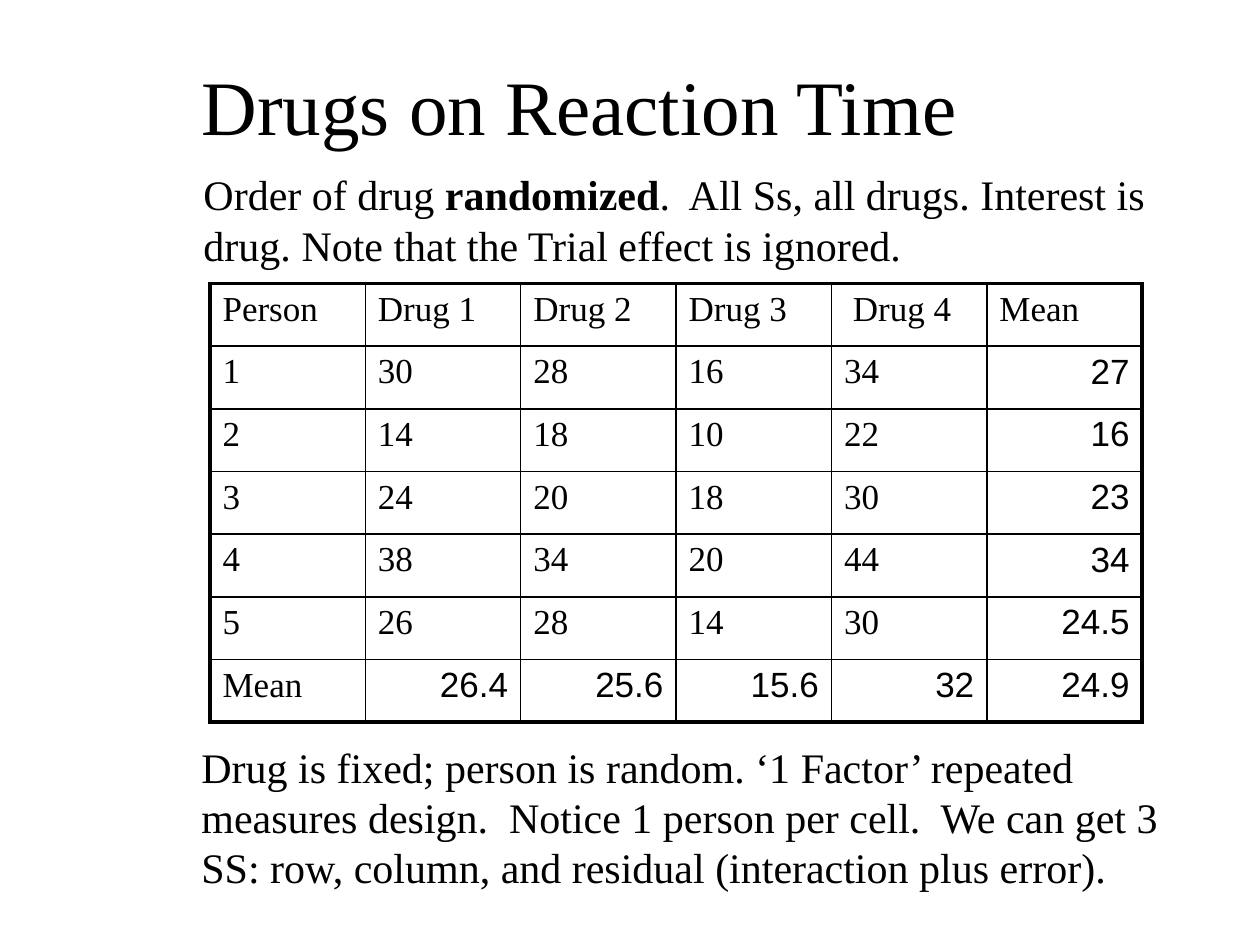
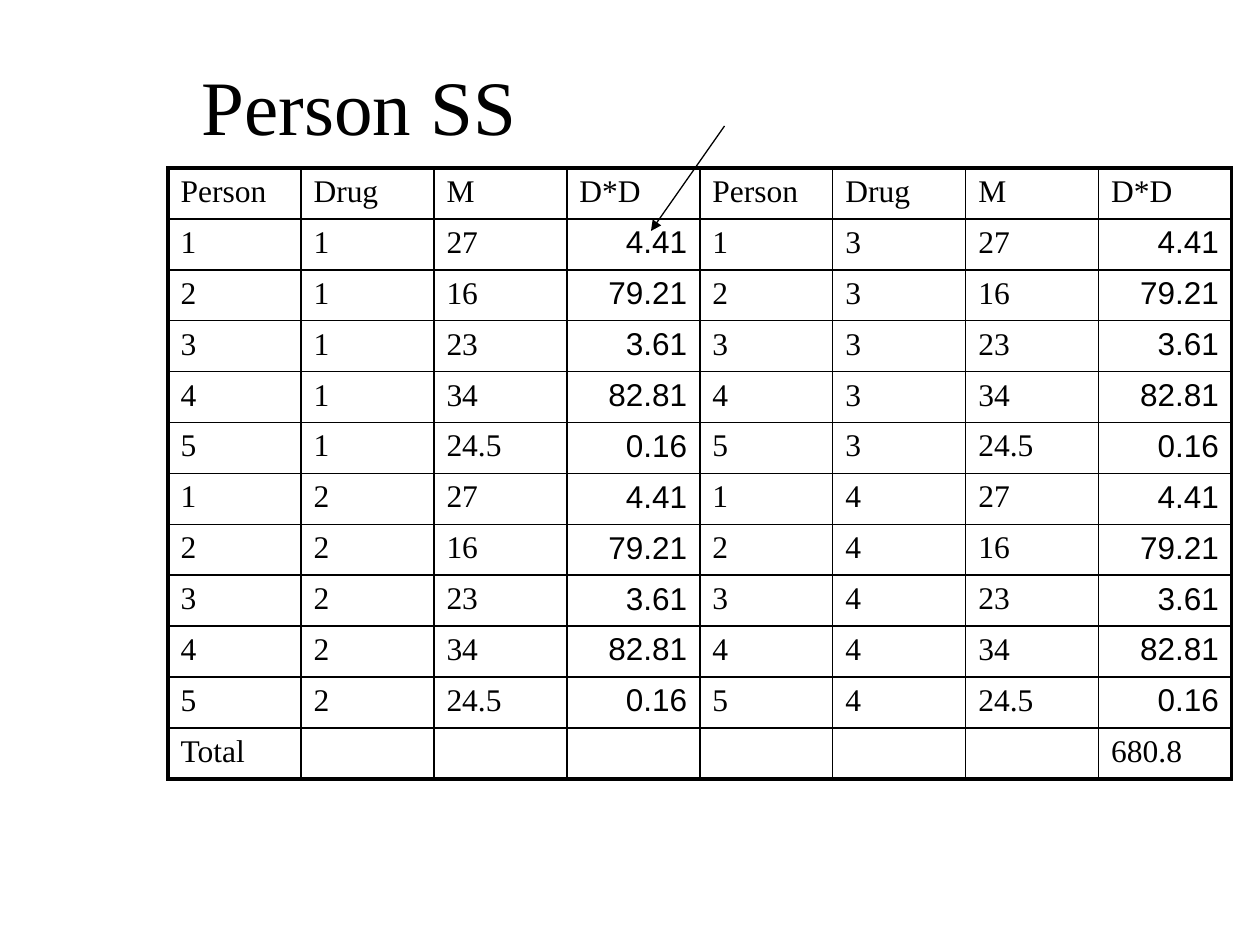
from lxml import etree
from pptx import Presentation
from pptx.dml.color import RGBColor
from pptx.enum.shapes import MSO_CONNECTOR
from pptx.enum.text import MSO_ANCHOR, MSO_AUTO_SIZE, PP_ALIGN
from pptx.oxml.ns import qn
from pptx.util import Inches, Pt

STRAIGHT = MSO_CONNECTOR.STRAIGHT
MIDDLE = MSO_ANCHOR.MIDDLE
FIXED_SIZE = MSO_AUTO_SIZE.NONE
LEFT, RIGHT = PP_ALIGN.LEFT, PP_ALIGN.RIGHT

COLOURS = {"ink": "000000"}
INK = RGBColor.from_string(COLOURS["ink"])
SERIF, SANS = "Times New Roman", "Arial"
THIN, THICK = Pt(1), Pt(2.25)

# The slide is a grid of 120 columns and 90 rows
COLUMNS, ROWS = 120, 90
deck = Presentation()
deck.slide_width, deck.slide_height = Inches(10), Inches(7.5)
CELL = deck.slide_width / COLUMNS
TITLE_AREA = (18, 4, 93, 12)


def write(paragraph, pieces, size, name=SERIF, alignment=LEFT):
    """Write (text, bold) pieces as one formatted paragraph."""
    paragraph.alignment = alignment
    for text, bold in pieces:
        span = paragraph.add_run()
        span.text = text
        for key, value in {"size": Pt(size), "name": name, "bold": bold}.items():
            setattr(span.font, key, value)
        span.font.color.rgb = INK


def add_ruled_table(slide, area, rows, size):
    """Draw a ruled table; numbers are calculated values, set right in sans."""
    left, top, width, height = [round(CELL * length) for length in area]
    row_count, column_count = len(rows), len(rows[0])
    table = slide.shapes.add_table(row_count, column_count, left, top, width, height).table
    table.first_row = table.horz_banding = False
    for column in table.columns:
        column.width = round(width / column_count)
    for row in table.rows:
        row.height = round(height / row_count)
    for r, values in enumerate(rows):
        for c, value in enumerate(values):
            cell = table.cell(r, c)
            paragraph = cell.text_frame.paragraphs[0]
            if isinstance(value, float):
                write(paragraph, [(f"{value:g}", False)], size, SANS, RIGHT)
            elif value:
                write(paragraph, [(value, False)], size)
            # Thick rules on the outer edge, thin ones inside
            outer_edges = {"lnL": c == 0, "lnR": c == column_count - 1,
                           "lnT": r == 0, "lnB": r == row_count - 1}
            properties = cell._tc.get_or_add_tcPr()
            for tag, is_outer in outer_edges.items():
                rule = etree.SubElement(properties, qn(f"a:{tag}"), w=str(THICK if is_outer else THIN))
                fill = etree.SubElement(rule, qn("a:solidFill"))
                etree.SubElement(fill, qn("a:srgbClr"), val=COLOURS["ink"])
            cell.fill.background()


# Slides with their titles
slides = []
for title_text in ("Drugs on Reaction Time", "Person SS"):
    slide = deck.slides.add_slide(deck.slide_layouts[5])
    title = slide.shapes.title
    title.left, title.top, title.width, title.height = [round(CELL * n) for n in TITLE_AREA]
    for key, value in {"auto_size": FIXED_SIZE, "vertical_anchor": MIDDLE, "word_wrap": True}.items():
        setattr(title.text_frame, key, value)
    write(title.text_frame.paragraphs[0], [(title_text, False)], 44)
    slides.append(slide)
drug_slide, person_slide = slides

# Reaction times: one row per person, one column per drug
times = [(30, 28, 16, 34), (14, 18, 10, 22), (24, 20, 18, 30), (38, 34, 20, 44), (26, 28, 14, 30)]
person_means = [sum(row) / len(row) for row in times]
drug_means = [sum(column) / len(column) for column in zip(*times)]
grand_mean = sum(person_means) / len(person_means)

# Slide 1: data table with notes above and below
notes = [
    ((18.2, 15.5, 99.2, 10.9),
     [("Order of drug ", False), ("randomized", True),
      (".  All Ss, all drugs. Interest is drug. Note that the Trial effect is ignored.", False)]),
    ((18, 70, 95.2, 15.6),
     [("Drug is fixed; person is random. ‘1 Factor’ repeated measures design.  "
       "Notice 1 person per cell.  We can get 3 SS: row, column, and residual "
       "(interaction plus error).", False)]),
]
for area, pieces in notes:
    box = drug_slide.shapes.add_textbox(*[round(CELL * n) for n in area])
    box.text_frame.word_wrap = True
    write(box.text_frame.paragraphs[0], pieces, 24)

drug_rows = [["Person", "Drug 1", "Drug 2", "Drug 3", " Drug 4", "Mean"]]
for person, (row, mean) in enumerate(zip(times, person_means), start=1):
    drug_rows.append([str(person), *map(str, row), mean])
drug_rows.append(["Mean", *drug_means, grand_mean])
add_ruled_table(drug_slide, (20, 27, 88.8, 41.8), drug_rows, 20)

# Slide 2: squared deviations of the person means, drugs 1-2 beside drugs 3-4
squares = [(mean - grand_mean) ** 2 for mean in person_means]
person_rows = [["Person", "Drug", "M", "D*D"] * 2]
for left_drug in (1, 2):
    for person, (mean, square) in enumerate(zip(person_means, squares), start=1):
        row = []
        for drug in (left_drug, left_drug + 2):
            row += [str(person), str(drug), f"{mean:g}", square]
        person_rows.append(row)
person_rows.append(["Total", *[""] * 6, f"{sum(squares) * len(drug_means):g}"])
add_ruled_table(person_slide, (16, 16, 101.3, 58.2), person_rows, 18)

# Arrow to the first squared deviation
arrow = person_slide.shapes.add_connector(STRAIGHT, *[round(CELL * n) for n in (69, 12, 62, 22)])
arrow.line.color.rgb = INK
arrow.line.width = Pt(0.75)
etree.SubElement(arrow.line._get_or_add_ln(), qn("a:tailEnd"), type="triangle")
etree.SubElement(arrow._element.spPr, qn("a:effectLst"))

deck.save("out.pptx")
